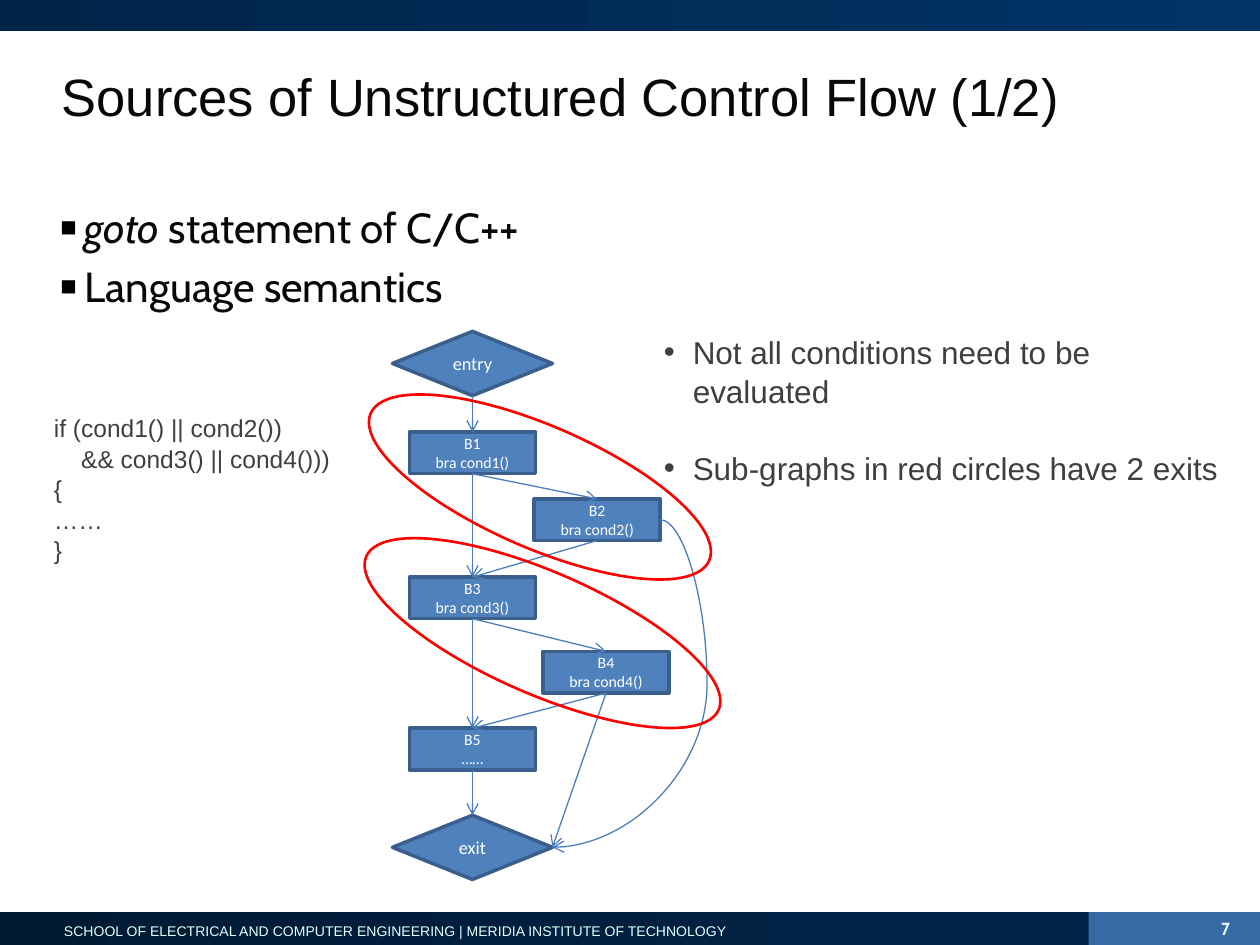
import dataclasses

import lxml.etree
import pptx
import pptx.dml.color
import pptx.enum.shapes
import pptx.enum.text
import pptx.oxml.ns
import pptx.util

SHAPE = pptx.enum.shapes.MSO_SHAPE
CONNECTOR = pptx.enum.shapes.MSO_CONNECTOR
ALIGN = pptx.enum.text.PP_ALIGN
ANCHOR = pptx.enum.text.MSO_ANCHOR
TOP, BOTTOM, RIGHT = 0, 2, 3
CELL = pptx.util.Inches(0.1)  # the slide is a grid of 100 columns by 75 rows


@dataclasses.dataclass(frozen=True)
class Theme:
    heading: str = "Arial"
    body: str = "Cabin"
    diagram: str = "Calibri"
    ink: str = "080808"
    gray: str = "3F3F3F"
    pale: str = "E5FFFF"
    white: str = "FFFFFF"
    bullet: str = "000000"
    navy: tuple = ("001A34", "002448", "003366")
    badge: str = "366AA4"
    node: str = "4F81BD"
    node_edge: str = "3A5F8C"
    arrow: str = "4B7EBC"
    circle: str = "FF0000"
    title_size: float = 30
    body_size: float = 24
    note_size: float = 18
    code_size: float = 14
    terminal_size: float = 10.5
    number_size: float = 10
    block_size: float = 9
    footer_size: float = 8
    line_spacing: float = 1.04


THEME = Theme()


@dataclasses.dataclass(frozen=True)
class Box:
    left: float
    top: float
    width: float
    height: float

    def inner(self, left, top, width, height):
        return Box(self.left + left, self.top + top, width, height)

    def lengths(self):
        return [int(CELL * n) for n in (self.left, self.top, self.width, self.height)]


def color(value):
    return pptx.dml.color.RGBColor.from_string(value)


def add_element(parent, tag, **attributes):
    return lxml.etree.SubElement(parent, pptx.oxml.ns.qn(tag), attributes)


def format_text(text_frame, font, size, ink, align=ALIGN.LEFT, bold=None):
    for paragraph in text_frame.paragraphs:
        paragraph.alignment = align
        for run in paragraph.runs:
            run.font.name, run.font.size = font, pptx.util.Pt(size)
            run.font.color.rgb = color(ink)
            run.font.bold = bold


def set_bullet(paragraph, character, indent, ink, percent=100):
    properties = paragraph._p.get_or_add_pPr()
    properties.set("marL", str(int(CELL * indent)))
    properties.set("indent", str(int(-CELL * indent)))
    ink_element = add_element(properties, "a:buClr")
    add_element(ink_element, "a:srgbClr", val=ink)
    add_element(properties, "a:buSzPct", val=str(percent * 1000))
    add_element(properties, "a:buFont", typeface="Arial")
    add_element(properties, "a:buChar", char=character)


def add_text(slide, box, text, font, size, ink, wrap=True, **options):
    text_frame = slide.shapes.add_textbox(*box.lengths()).text_frame
    text_frame.word_wrap = wrap
    text_frame.text = text
    format_text(text_frame, font, size, ink, **options)
    return text_frame


def add_shape(slide, kind, box, fill=None, edge=None, edge_width=0):
    shape = slide.shapes.add_shape(kind, *box.lengths())
    shape.shadow.inherit = False
    if fill is None:
        shape.fill.background()
    elif isinstance(fill, str):
        shape.fill.solid()
        shape.fill.fore_color.rgb = color(fill)
    else:
        shape.fill.gradient()
        shape.fill.gradient_angle = 0
        for stop, value in zip(shape.fill.gradient_stops, fill):
            stop.color.rgb = color(value)
    if edge:
        shape.line.color.rgb = color(edge)
        shape.line.width = pptx.util.Pt(edge_width)
    else:
        shape.line.fill.background()
    return shape


def add_bands(slide, box):
    # Top band, footer band and page number badge
    add_shape(slide, SHAPE.RECTANGLE, box.inner(0, 0, box.width, 2.5), THEME.navy[1:])
    footer = box.inner(0, box.height - 2.6, box.width, 2.6)
    add_shape(slide, SHAPE.RECTANGLE, footer.inner(0, 0, 86.5, 2.6), THEME.navy[:2])
    add_shape(slide, SHAPE.RECTANGLE, footer.inner(86.4, 0, 13.6, 2.6), THEME.badge)
    add_text(slide, footer.inner(4.1, 0.3, 55.3, 2.3),
             "SCHOOL OF ELECTRICAL AND COMPUTER ENGINEERING | MERIDIA INSTITUTE OF TECHNOLOGY",
             THEME.heading, THEME.footer_size, THEME.pale, wrap=False)
    add_text(slide, footer.inner(94.4, 0, 4.2, 2.3), "7", THEME.body,
             THEME.number_size, THEME.pale, align=ALIGN.RIGHT, bold=True)


def fill_placeholder(placeholder, box, text, font, size, anchor):
    placeholder.left, placeholder.top, placeholder.width, placeholder.height = box.lengths()
    text_frame = placeholder.text_frame
    text_frame.text = text
    text_frame.auto_size = pptx.enum.text.MSO_AUTO_SIZE.NONE
    text_frame.vertical_anchor = anchor
    format_text(text_frame, font, size, THEME.ink)
    return text_frame


def fill_title(slide, box):
    fill_placeholder(slide.shapes.title, box, "Sources of Unstructured Control Flow (1/2)",
                     THEME.heading, THEME.title_size, ANCHOR.MIDDLE)


def fill_topics(slide, box):
    text_frame = fill_placeholder(slide.placeholders[1], box, "goto\nLanguage semantics",
                                  THEME.body, THEME.body_size, ANCHOR.TOP)
    first = text_frame.paragraphs[0]
    first.add_run().text = " statement of C/C++"
    format_text(text_frame, THEME.body, THEME.body_size, THEME.ink)
    first.runs[0].font.italic = True
    for paragraph in text_frame.paragraphs:
        paragraph.space_before = pptx.util.Pt(THEME.body_size * 0.2)
        set_bullet(paragraph, "■", 1.9, THEME.bullet, 65)


def add_code(slide, box):
    text_frame = add_text(slide, box,
                          "if (cond1() || cond2())\n&& cond3() || cond4()))\n{\n……\n}",
                          THEME.heading, THEME.code_size, THEME.gray)
    for paragraph in text_frame.paragraphs:
        paragraph.line_spacing = THEME.line_spacing
    continuation = text_frame.paragraphs[1]._p.get_or_add_pPr()
    continuation.set("marL", str(int(CELL * 2.16)))


def add_notes_list(slide, box):
    text_frame = add_text(slide, box, "Not all conditions need to be evaluated\n"
                          "Sub-graphs in red circles have 2 exits",
                          THEME.heading, THEME.note_size, THEME.gray)
    for paragraph in text_frame.paragraphs:
        paragraph.line_spacing = THEME.line_spacing
    text_frame.paragraphs[1].space_before = pptx.util.Pt(21.5)
    for paragraph in text_frame.paragraphs:
        set_bullet(paragraph, "•", 2.3, THEME.gray)


def add_node(slide, box, kind, text, size):
    node = add_shape(slide, kind, box, THEME.node, THEME.node_edge, 2)
    text_frame = node.text_frame
    text_frame.margin_left = text_frame.margin_right = 0
    text_frame.margin_top = text_frame.margin_bottom = 0
    text_frame.vertical_anchor = ANCHOR.MIDDLE
    text_frame.text = text
    format_text(text_frame, THEME.diagram, size, THEME.white, ALIGN.CENTER)
    return node


def add_arrow(slide, start, start_site, end, end_site, kind=CONNECTOR.STRAIGHT):
    arrow = slide.shapes.add_connector(kind, 0, 0, 0, 0)
    arrow.begin_connect(start, start_site)
    arrow.end_connect(end, end_site)
    arrow.line.color.rgb = color(THEME.arrow)
    arrow.line.width = pptx.util.Pt(0.75)
    properties = arrow._element.spPr
    add_element(properties.find(pptx.oxml.ns.qn("a:ln")), "a:tailEnd", type="arrow")
    add_element(properties, "a:effectLst")
    return arrow


def add_flowchart(slide, box):
    # Nodes: centre column and top row inside the box
    spine = 9.7
    nodes = {}
    for name, top in (("entry", 0), ("exit", 38.4)):
        nodes[name] = add_node(slide, box.inner(spine - 6.35, top, 12.7, 5.1),
                               SHAPE.DIAMOND, name, THEME.terminal_size)
    for name, code, center, top in (
            ("B1", "bra cond1()", spine, 8), ("B2", "bra cond2()", 19.6, 13.3),
            ("B3", "bra cond3()", spine, 19.5), ("B4", "bra cond4()", 20.3, 25.4),
            ("B5", "……", spine, 31.5)):
        nodes[name] = add_node(slide, box.inner(center - 5, top, 10, 3.3),
                               SHAPE.RECTANGLE, f"{name}\n{code}", THEME.block_size)
    # Branches
    for start, end in (("entry", "B1"), ("B1", "B2"), ("B1", "B3"), ("B2", "B3"),
                       ("B3", "B4"), ("B3", "B5"), ("B4", "B5"), ("B5", "exit")):
        add_arrow(slide, nodes[start], BOTTOM, nodes[end], TOP)
    add_arrow(slide, nodes["B4"], BOTTOM, nodes["exit"], RIGHT)
    curve = add_arrow(slide, nodes["B2"], RIGHT, nodes["exit"], RIGHT, CONNECTOR.CURVE)
    guides = curve._element.spPr.find(".//" + pptx.oxml.ns.qn("a:avLst"))
    add_element(guides, "a:gd", name="adj1", fmla="val -43600")
    # Circles around the sub-graphs with two exits
    for area in ((0.4, 7.5, 29.3, 9.7), (0, 19.1, 30.5, 9.7)):
        circle = add_shape(slide, SHAPE.OVAL, box.inner(*area), None, THEME.circle, 1.5)
        circle.rotation = 23.5


def main():
    presentation = pptx.Presentation()
    page = Box(0, 0, 100, 75)
    presentation.slide_width, presentation.slide_height = page.lengths()[2:]
    slide = presentation.slides.add_slide(presentation.slide_layouts[1])
    add_bands(slide, page)
    fill_title(slide, page.inner(3.9, 2.4, 93, 10.4))
    fill_topics(slide, page.inner(3.8, 15.5, 93.1, 53.1))
    add_notes_list(slide, page.inner(51.7, 25.8, 46.7, 10.1))
    add_flowchart(slide, page.inner(27.8, 26.3, 30.5, 43.5))
    add_code(slide, page.inner(3.3, 32.2, 25, 12.8))
    presentation.save("out.pptx")


if __name__ == "__main__":
    main()
